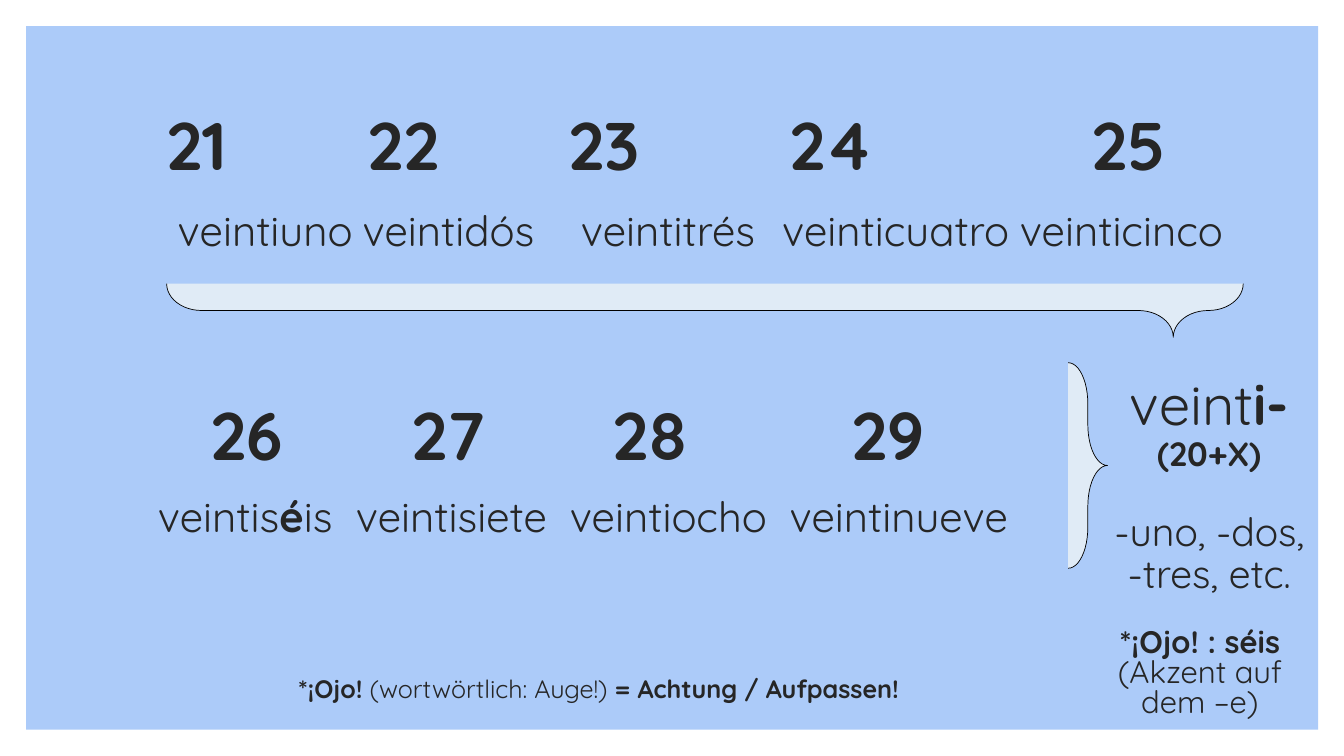
from lxml.etree import SubElement
from pptx import Presentation
from pptx.dml.color import RGBColor
from pptx.enum.shapes import MSO_SHAPE as SHAPE
from pptx.enum.text import MSO_ANCHOR as ANCHOR, PP_ALIGN as ALIGN
from pptx.oxml.ns import qn
from pptx.util import Cm, Pt

INSET = 0.25

prs = Presentation()
prs.slide_width, prs.slide_height = Cm(33.87), Cm(19.05)
slide = prs.slides.add_slide(prs.slide_layouts[6])


def add_text(box, *paragraphs, size, bold=False, spacing=0.9, stops=()):
    """Each paragraph lists (text, format changes); stops are slide positions in cm."""
    left, top, width, height = box
    s = slide.shapes.add_textbox(Cm(left), Cm(top), Cm(width), Cm(height))
    tf = s.text_frame
    tf.word_wrap = True
    tf.vertical_anchor = ANCHOR.MIDDLE
    for i, runs in enumerate(paragraphs):
        p = tf.paragraphs[0] if i == 0 else tf.add_paragraph()
        p.alignment = ALIGN.LEFT if stops else ALIGN.CENTER
        p.line_spacing = spacing
        if stops:
            tabs = SubElement(p._p.get_or_add_pPr(), qn("a:tabLst"))
            for stop in stops:
                SubElement(tabs, qn("a:tab"), pos=str(Cm(stop - left - INSET)), algn="l")
        for text, changes in runs:
            r = p.add_run()
            r.text = text
            r.font.name = "Quicksand"
            r.font.size = Pt(changes.get("size", size))
            r.font.bold = changes.get("bold", bold)
            r.font.color.rgb = RGBColor.from_string("262626")


def add_shape(kind, box, fill, line=None):
    s = slide.shapes.add_shape(kind, *[Cm(v) for v in box])
    s.shadow.inherit = False
    s.fill.solid()
    s.fill.fore_color.rgb = RGBColor.from_string(fill)
    if line:
        s.line.color.rgb = RGBColor.from_string(line)
        s.line.width = Pt(0.5)
    else:
        s.line.fill.background()
    return s


BOLD, PLAIN = {"bold": True}, {"bold": False}

add_shape(SHAPE.RECTANGLE, (0.66, 0.66, 32.56, 17.73), "ACCBF9")

# Numbers 21 to 29, with their words below
add_text((2.11, 1.85, 29.67, 3.81), [("\t21\t22\t23\t24\t25", {})],
         size=48, bold=True, stops=(4.2, 9.25, 14.34, 19.9, 27.52))
add_text((2.97, 3.96, 29.39, 3.81),
         [("\tveintiuno\tveintidós\tveintitrés\tveinticuatro\tveinticinco", {})],
         size=30, stops=(4.48, 9.14, 14.64, 19.71, 25.7))
add_text((1.52, 9.14, 27.94, 3.81), [("\t26\t27\t28\t29", {})],
         size=48, bold=True, stops=(5.31, 10.38, 15.44, 21.46))
add_text((0, 11.18, 29.39, 3.81),
         [("\tveintis", {}), ("é", BOLD), ("is\tveintisiete\tveintiocho\tveintinueve", {})],
         size=30, stops=(3.98, 8.97, 14.36, 19.9))

# Braces that gather both rows into the rule
for box, tip, angle in [((26.92, 9.14, 0.99, 5.18), 0.5, 0),
                        ((17.09, -5.74, 1.35, 27.13), 0.065, 90)]:
    brace = add_shape(SHAPE.RIGHT_BRACE, box, "E0EBF6", line="000000")
    brace.adjustments[0] = 1.042
    brace.adjustments[1] = tip
    brace.rotation = angle

# Rule: veinti- plus the unit
add_text((27.58, 8.81, 5.79, 3.81),
         [("veint", {}), ("i-", BOLD)], [("(20+X)", {"size": 24, "bold": True})], size=40)
add_text((27.58, 12.07, 5.79, 3.81), [("-uno, -dos, -tres, etc.", {})], size=28)

# Notes
add_text((27.05, 15.67, 6.38, 2.67),
         [("*¡Ojo! : séis ", BOLD), ("(Akzent auf dem –e)", {})], size=22.2, spacing=0.8)
add_text((3.15, 16.05, 23.88, 2.67),
         [("*¡Ojo! ", {}), ("(wortwörtlich: Auge!)", PLAIN), (" = Achtung / Aufpassen!", {})],
         size=18, bold=True)

prs.save("out.pptx")
